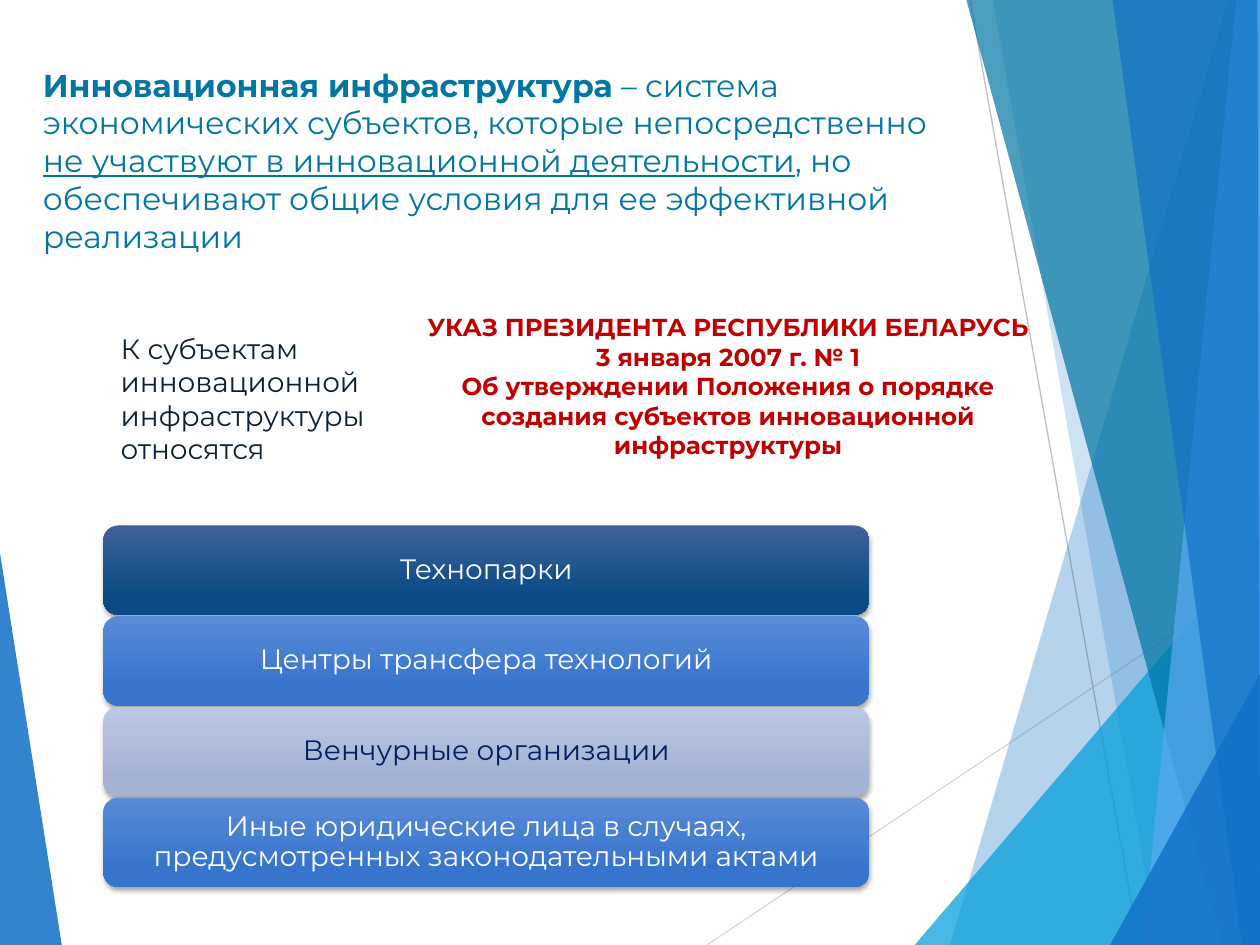
"""Build a slide on the innovation infrastructure and its subjects."""
from dataclasses import dataclass

from lxml.etree import SubElement
from pptx import Presentation
from pptx.dml.color import RGBColor
from pptx.enum.shapes import MSO_CONNECTOR, MSO_SHAPE
from pptx.enum.text import MSO_ANCHOR, MSO_AUTO_SIZE, PP_ALIGN
from pptx.oxml.ns import qn
from pptx.util import Inches, Pt


@dataclass(frozen=True)
class Theme:
    font: str = "Montserrat"
    title: str = "0076A3"
    body: str = "0C2036"
    decree: str = "C00000"
    white: str = "FFFFFF"
    navy: str = "002060"
    blue: str = "0F6FC6"
    cyan: str = "009DD9"
    teal: str = "0076A3"
    sky: str = "59AAF2"
    dark_card: tuple = ("3F6299", "0A4B86")
    blue_card: tuple = ("598AD7", "3775CD")
    pale_card: tuple = ("BCC8E3", "A4B2D4")
    title_size: int = 18
    body_size: int = 16
    decree_size: int = 14


THEME = Theme()
COLUMNS, ROWS = 100, 75
CELL = Inches(0.1)

DEFINITION = [
    ("Инновационная инфраструктура", True, False),
    (" – система экономических субъектов, которые непосредственно ", False, False),
    ("не участвуют в инновационной деятельности", False, True),
    (", но обеспечивают общие условия для ее эффективной реализации", False, False),
]
LEAD_IN = ["К субъектам инновационной инфраструктуры относятся"]
DECREE = [
    "УКАЗ ПРЕЗИДЕНТА РЕСПУБЛИКИ БЕЛАРУСЬ 3 января 2007 г. № 1",
    "Об утверждении Положения о порядке создания субъектов инновационной инфраструктуры",
]
SUBJECTS = [
    ("Технопарки", THEME.dark_card, THEME.white),
    ("Центры трансфера технологий", THEME.blue_card, THEME.white),
    ("Венчурные организации", THEME.pale_card, THEME.navy),
    ("Иные юридические лица в случаях, предусмотренных законодательными актами",
     THEME.blue_card, THEME.white),
]

TITLE_BOX = (2.4, 4.7, 72.5, 12.5)
LEAD_IN_BOX = (8.6, 25.8, 24.2, 11.8)
DECREE_BOX = (32.8, 24.3, 50, 12.8)
FIRST_CARD = (8.2, 41.7, 60.8, 7.1)
CARD_PITCH = 7.2

LEFT_FACET = ([(0, 43.9), (4.9, ROWS), (0, ROWS)], THEME.blue, 85)
RAYS = [((56.1, ROWS), (COLUMNS, 45.7), "D9D9D9"), ((77, 0), (90.4, ROWS), "BFBFBF")]
RIGHT_FACETS = [
    ([(97.5, 0), (75.4, ROWS), (COLUMNS, ROWS), (COLUMNS, 0)], THEME.blue, 30),
    ([(78.8, 0), (91.9, ROWS), (COLUMNS, ROWS), (COLUMNS, 0)], THEME.blue, 20),
    ([(72.6, ROWS), (COLUMNS, 42.9), (COLUMNS, ROWS)], THEME.cyan, 72),
    ([(76.7, 0), (97, ROWS), (COLUMNS, ROWS), (COLUMNS, 0)], THEME.teal, 70),
    ([(98.1, 0), (90.7, ROWS), (COLUMNS, ROWS), (COLUMNS, 0)], THEME.sky, 70),
    ([(88.3, 0), (98.6, ROWS), (COLUMNS, ROWS), (99.8, 0)], THEME.blue, 65),
    ([(88.1, ROWS), (COLUMNS, 53.5), (COLUMNS, ROWS)], THEME.blue, 80),
]


def to_emu(cells):
    return [round(value * CELL) for value in cells]


def style_run(run, size, color, bold=False, underline=False):
    run.font.name = THEME.font
    run.font.size = Pt(size)
    run.font.color.rgb = RGBColor.from_string(color)
    run.font.bold = bold
    run.font.underline = underline


def add_facet(slide, points, color, opacity):
    start, *others = [to_emu(point) for point in points]
    builder = slide.shapes.build_freeform(*start)
    builder.add_line_segments(others)
    facet = builder.convert_to_shape()
    facet.shadow.inherit = False
    facet.line.fill.background()
    facet.fill.solid()
    facet.fill.fore_color.rgb = RGBColor.from_string(color)
    color_element = facet.fill._xPr.find(qn("a:solidFill"))[0]
    SubElement(color_element, qn("a:alpha"), val=str(opacity * 1000))


def add_ray(slide, start, end, color):
    ray = slide.shapes.add_connector(MSO_CONNECTOR.STRAIGHT, *to_emu(start), *to_emu(end))
    ray.line.color.rgb = RGBColor.from_string(color)
    ray.line.width = Pt(0.75)
    SubElement(ray._element.spPr, qn("a:effectLst"))


def add_title(slide):
    title = slide.shapes.title
    title.left, title.top, title.width, title.height = to_emu(TITLE_BOX)
    frame = title.text_frame
    frame.word_wrap = True
    frame.auto_size = MSO_AUTO_SIZE.NONE
    frame.vertical_anchor = MSO_ANCHOR.TOP
    paragraph = frame.paragraphs[0]
    paragraph.alignment = PP_ALIGN.LEFT
    for text, bold, underline in DEFINITION:
        run = paragraph.add_run()
        run.text = text
        style_run(run, THEME.title_size, THEME.title, bold, underline)


def add_text(slide, box, lines, size, color, alignment, bold=False):
    frame = slide.shapes.add_textbox(*to_emu(box)).text_frame
    frame.word_wrap = True
    frame.text = "\n".join(lines)
    for paragraph in frame.paragraphs:
        paragraph.alignment = alignment
        style_run(paragraph.runs[0], size, color, bold)


def add_card_shadow(card):
    card.shadow.inherit = False
    effects = card._element.spPr.find(qn("a:effectLst"))
    shadow = SubElement(effects, qn("a:outerShdw"), blurRad=str(Pt(3)), dist=str(Pt(2)),
                        dir="5400000", rotWithShape="0")
    color = SubElement(shadow, qn("a:srgbClr"), val="000000")
    SubElement(color, qn("a:alpha"), val="35000")


def add_card(slide, row, text, gradient, text_color):
    left, top, width, height = FIRST_CARD
    box = to_emu((left, top + row * CARD_PITCH, width, height))
    card = slide.shapes.add_shape(MSO_SHAPE.ROUNDED_RECTANGLE, *box)
    card.line.fill.background()
    card.fill.gradient()
    card.fill.gradient_angle = 270
    for stop, color, position in zip(card.fill.gradient_stops, gradient, (0, 0.78)):
        stop.color.rgb = RGBColor.from_string(color)
        stop.position = position
    add_card_shadow(card)
    frame = card.text_frame
    frame.word_wrap = True
    frame.vertical_anchor = MSO_ANCHOR.MIDDLE
    frame.margin_left = frame.margin_right = Inches(0.07)
    frame.margin_top = frame.margin_bottom = Inches(0.07)
    frame.text = text
    paragraph = frame.paragraphs[0]
    paragraph.alignment = PP_ALIGN.CENTER
    paragraph.line_spacing = 0.9
    style_run(paragraph.runs[0], THEME.body_size, text_color)


def main():
    presentation = Presentation()
    presentation.slide_width = COLUMNS * CELL
    presentation.slide_height = ROWS * CELL
    slide = presentation.slides.add_slide(presentation.slide_layouts[5])
    add_facet(slide, *LEFT_FACET)
    for ray in RAYS:
        add_ray(slide, *ray)
    for facet in RIGHT_FACETS:
        add_facet(slide, *facet)
    add_title(slide)
    for row, subject in enumerate(SUBJECTS):
        add_card(slide, row, *subject)
    add_text(slide, LEAD_IN_BOX, LEAD_IN, THEME.body_size, THEME.body, PP_ALIGN.LEFT)
    add_text(slide, DECREE_BOX, DECREE, THEME.decree_size, THEME.decree,
             PP_ALIGN.CENTER, bold=True)
    presentation.save("out.pptx")


if __name__ == "__main__":
    main()
